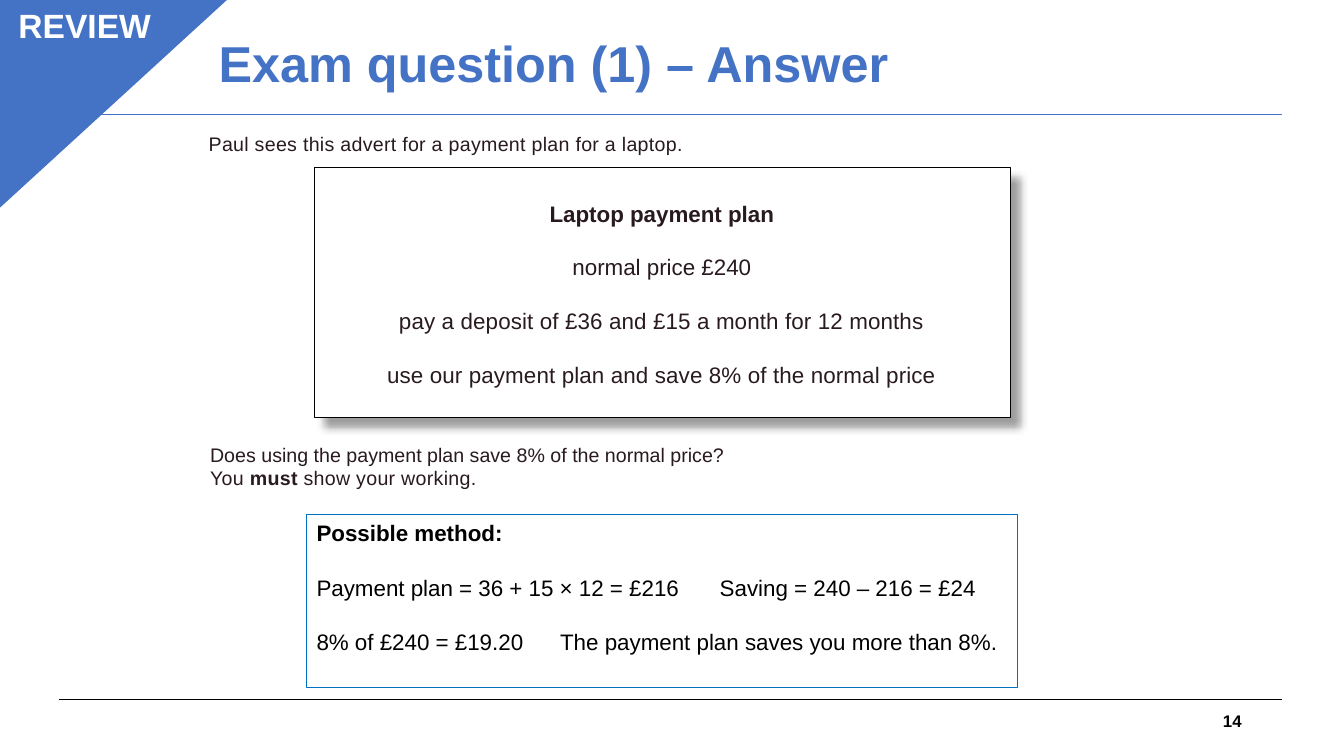
from lxml.etree import SubElement
from pptx import Presentation
from pptx.dml.color import RGBColor
from pptx.enum.shapes import MSO_CONNECTOR, MSO_SHAPE
from pptx.enum.text import MSO_ANCHOR, PP_ALIGN
from pptx.oxml.ns import qn
from pptx.util import Pt

COLORS = {
    "blue": "4472C4",
    "frame": "0070C0",
    "ink": "291A20",
    "black": "000000",
    "white": "FFFFFF",
    "shadow": "0D0D0D",
}


class SlideBuilder:
    font = "Arial"

    def __init__(self, slide):
        self.slide = slide

    def color(self, name):
        return RGBColor.from_string(COLORS[name])

    def rule(self, left, right, top, color):
        line = self.slide.shapes.add_connector(
            MSO_CONNECTOR.STRAIGHT, Pt(left), Pt(top), Pt(right), Pt(top))
        line.line.color.rgb = self.color(color)
        line.line.width = Pt(0.75)
        SubElement(line.element.spPr, qn("a:effectLst"))

    def shape(self, kind, box, line, width, fill=None):
        shape = self.slide.shapes.add_shape(kind, *map(Pt, box))
        shape.shadow.inherit = False
        shape.line.color.rgb = self.color(line)
        shape.line.width = Pt(width)
        if fill:
            shape.fill.solid()
            shape.fill.fore_color.rgb = self.color(fill)
        else:
            shape.fill.background()
        return shape

    def corner(self, box, color):
        shape = self.shape(MSO_SHAPE.ISOSCELES_TRIANGLE, box, color, 1, color)
        shape.adjustments[0] = 0
        shape.element.spPr.xfrm.set("flipV", "1")

    def cast_shadow(self, shape, blur, distance):
        effects = shape.element.spPr.find(qn("a:effectLst"))
        shadow = SubElement(effects, qn("a:outerShdw"), blurRad=str(Pt(blur)),
                            dist=str(Pt(distance)), dir="2700000",
                            algn="tl", rotWithShape="0")
        tint = SubElement(shadow, qn("a:srgbClr"), val=COLORS["shadow"])
        SubElement(tint, qn("a:alpha"), val="40000")

    def text_box(self, box, paragraphs, wrap=True, **style):
        text_box = self.slide.shapes.add_textbox(*map(Pt, box))
        self.add_text(text_box, paragraphs, wrap=wrap, **style)

    def add_text(self, shape, paragraphs, size, color, align=PP_ALIGN.LEFT,
                 anchor=MSO_ANCHOR.TOP, spacing=None, gap=0, wrap=True):
        frame = shape.text_frame
        frame.word_wrap = wrap
        frame.vertical_anchor = anchor
        for index, runs in enumerate(paragraphs):
            paragraph = frame.add_paragraph() if index else frame.paragraphs[0]
            paragraph.alignment = align
            if spacing:
                paragraph.line_spacing = spacing
            if index and gap:
                paragraph.space_before = Pt(gap)
            for text, bold, tracking in runs:
                run = paragraph.add_run()
                run.text = text
                run.font.name = self.font
                run.font.size = Pt(size)
                run.font.bold = bold
                run.font.color.rgb = self.color(color)
                if tracking:
                    run.font._element.set("spc", str(tracking))

    def tab_stop(self, shape, index, position):
        properties = shape.text_frame.paragraphs[index]._p.get_or_add_pPr()
        tabs = SubElement(properties, qn("a:tabLst"))
        SubElement(tabs, qn("a:tab"), pos=str(Pt(position)), algn="l")


def main():
    presentation = Presentation()
    presentation.slide_width = Pt(960)
    presentation.slide_height = Pt(540)
    slide = presentation.slides.add_slide(presentation.slide_layouts[6])
    builder = SlideBuilder(slide)

    builder.rule(42.5, 916, 499.7, "black")
    builder.rule(42.5, 916, 82, "blue")
    builder.corner((-2, -1.5, 165, 151), "blue")
    builder.text_box((-2, 0, 125, 36), [[("REVIEW", True, 0)]],
                     size=24, color="white", align=PP_ALIGN.CENTER)
    builder.text_box((149, 24, 597, 69),
                     [[("Exam question (1) – Answer", True, 0)]],
                     size=36, color="blue", spacing=0.9)
    builder.text_box((678, 500.4, 216, 29), [[("14", True, 0)]],
                     size=12, color="black", align=PP_ALIGN.RIGHT,
                     anchor=MSO_ANCHOR.MIDDLE)

    builder.text_box(
        (142, 91, 355, 24),
        [[("Paul sees this advert for a payment plan for a laptop.", False, 20)]],
        wrap=False, size=14, color="ink")
    advert = builder.shape(MSO_SHAPE.RECTANGLE, (224.5, 119.5, 497, 178.5),
                           "black", 0.5, "white")
    builder.cast_shadow(advert, 6, 10)
    builder.text_box((242, 120, 461.5, 156), [
        [("Laptop payment plan", True, 0)],
        [("normal price £240", False, 0)],
        [("pay a deposit of £36 and £15 a month for 12 months", False, 10)],
        [("use our payment plan and save 8% of the normal price", False, 10)],
    ], size=16, color="ink", align=PP_ALIGN.CENTER, spacing=2)

    builder.text_box((143, 312.5, 659.5, 41), [
        [("Does using the payment plan save 8% of the normal price?", False, 0)],
        [("You ", False, 20), ("must", True, 20),
         (" show your working.", False, 20)],
    ], size=14, color="ink")

    method = builder.shape(MSO_SHAPE.RECTANGLE, (219, 367.5, 507.5, 123.5),
                           "frame", 0.75)
    builder.add_text(method, [
        [("Possible method:", True, 0)],
        [("Payment plan = 36 + 15 × 12 = £216\tSaving = 240 – 216 = £24",
          False, 0)],
        [("8% of £240 = £19.20\tThe payment plan saves you more than 8%.",
          False, 0)],
    ], size=16, color="black", gap=19.5)
    builder.tab_stop(method, 1, 288)
    builder.tab_stop(method, 2, 174)

    presentation.save("out.pptx")


if __name__ == "__main__":
    main()
